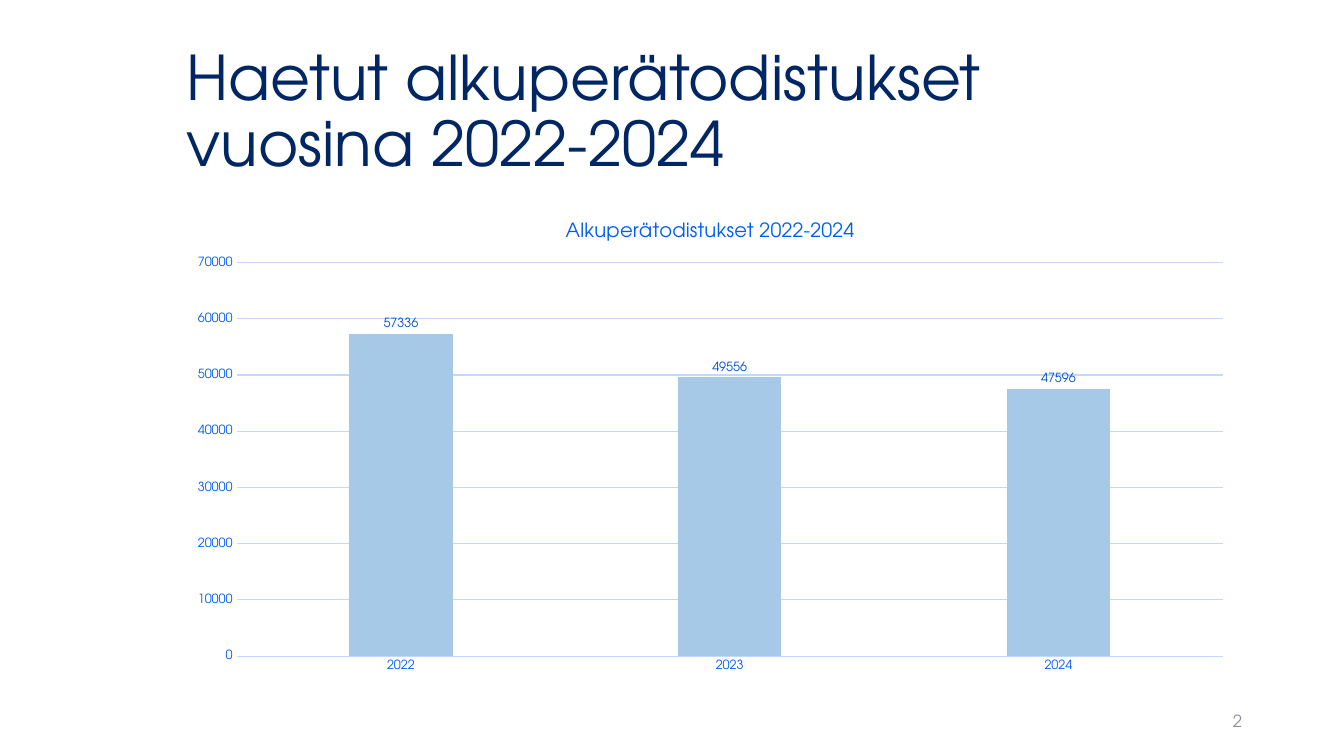
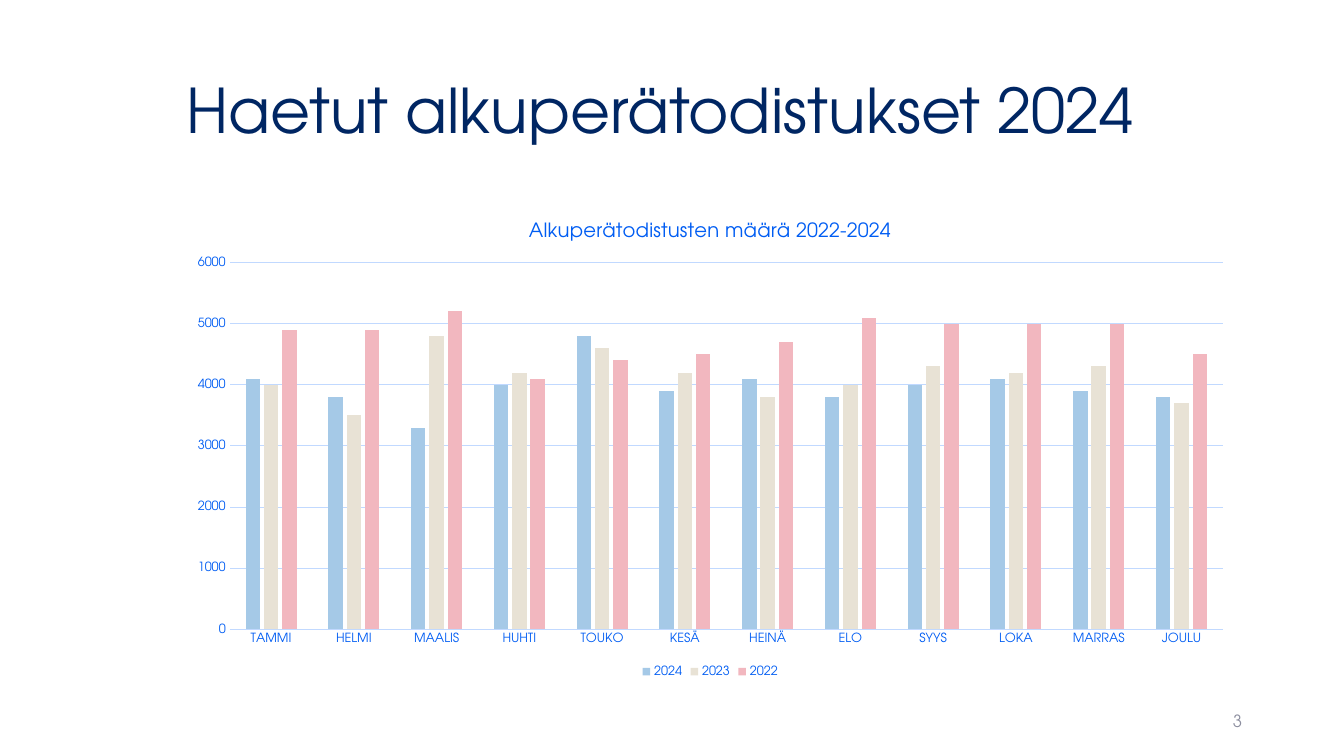
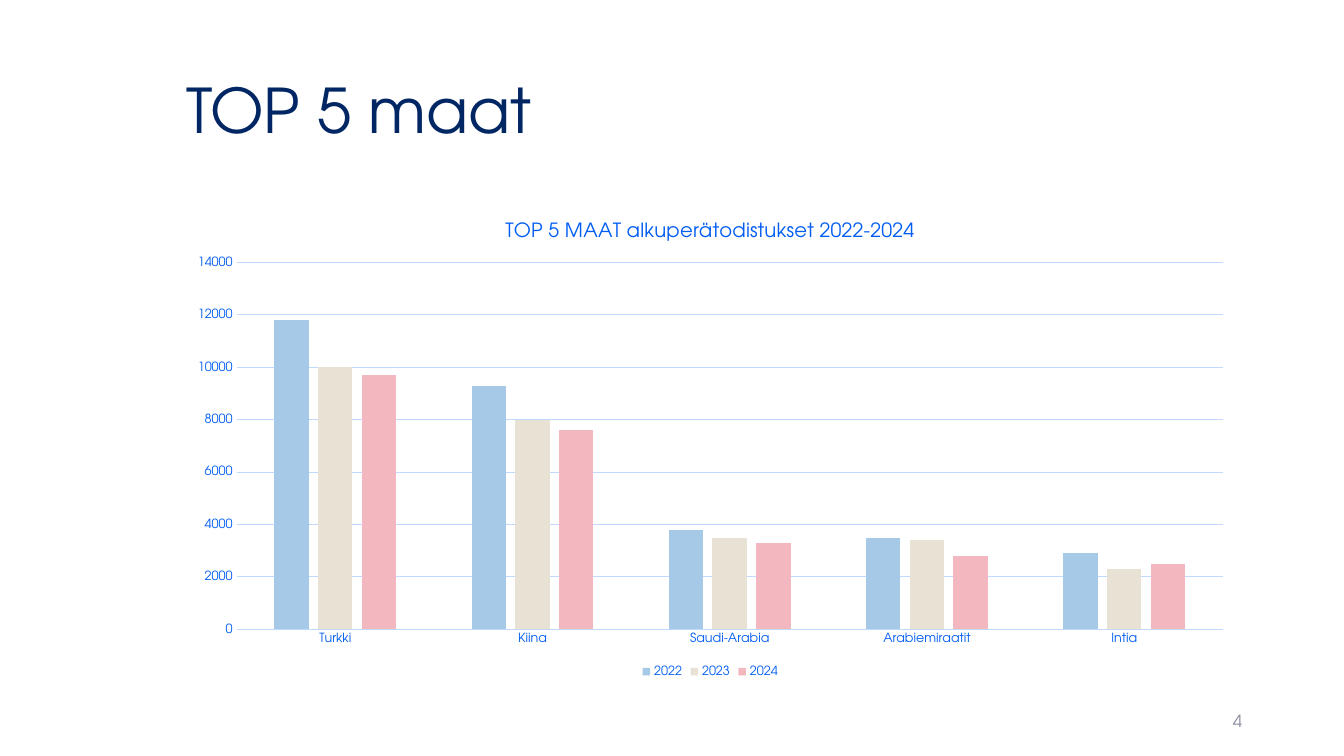
from pptx import Presentation
from pptx import util as u
from pptx.chart.data import CategoryChartData
from pptx.dml.color import RGBColor
from pptx.enum import chart as ch, text

# Shared style
FACE = "TeX Gyre Adventor"
NAVY, BLUE, DEEP = "002663", "005DF3", "004DCA"
PALE, GRAY = "C1D9FF", "8C8E9F"
BARS = ["A5C9E7", "E8E2D5", "F2B7BF"]
LEFT, WIDE = 1.75, 10.59


def paint(code):
    return RGBColor.from_string(code)


def assign(item, form):
    for key, val in form.items():
        setattr(item, key, val)


def style(font, size, code):
    assign(font, {"name": FACE, "size": u.Pt(size), "bold": False})
    font.color.rgb = paint(code)


def rule(line):
    line.width = u.Pt(0.75)
    line.color.rgb = paint(PALE)


class Deck:
    def __init__(self):
        self.show = Presentation()
        assign(self.show, {"slide_width": u.Inches(13.33),
                           "slide_height": u.Inches(7.5)})
        self.slide = None

    def page(self, title, number):
        self.slide = self.show.slides.add_slide(self.show.slide_layouts[5])
        self.title(title)
        self.number(number)

    def place(self, item, left, top, width, height):
        assign(item, {"left": u.Inches(left), "top": u.Inches(top),
                      "width": u.Inches(width), "height": u.Inches(height)})

    def label(self, shape, words, size, code, align):
        frame = shape.text_frame
        assign(frame, {"word_wrap": True,
                       "auto_size": text.MSO_AUTO_SIZE.NONE,
                       "vertical_anchor": text.MSO_ANCHOR.MIDDLE})
        para = frame.paragraphs[0]
        para.text = words
        para.alignment = align
        style(para.font, size, code)
        return para

    def title(self, words):
        shape = self.slide.shapes.title
        self.place(shape, LEFT, 0.4, WIDE, 1.45)
        para = self.label(shape, words, 44, NAVY, text.PP_ALIGN.LEFT)
        para.line_spacing = 0.9

    def number(self, value):
        box = self.slide.shapes.add_textbox(
            u.Inches(9.42), u.Inches(6.95), u.Inches(3), u.Inches(0.4))
        self.label(box, str(value), 12, GRAY, text.PP_ALIGN.RIGHT)

    def columns(self, title, cats, rows, top, step):
        data = CategoryChartData(number_format="0")
        data.categories = cats
        for name, vals in rows.items():
            data.add_series(name, vals)
        chart = self.slide.shapes.add_chart(
            ch.XL_CHART_TYPE.COLUMN_CLUSTERED, u.Inches(LEFT), u.Inches(2),
            u.Inches(WIDE), u.Inches(4.76), data).chart
        style(chart.font, 10, NAVY)

        # Heading
        chart.has_title = True
        para = chart.chart_title.text_frame.paragraphs[0]
        para.text = title
        style(para.runs[0].font, 14, BLUE)
        chart.chart_title.include_in_layout = False

        # Axes
        for axis in (chart.category_axis, chart.value_axis):
            assign(axis, {"major_tick_mark": ch.XL_TICK_MARK.NONE,
                          "minor_tick_mark": ch.XL_TICK_MARK.NONE})
            style(axis.tick_labels.font, 9, BLUE)
        rule(chart.category_axis.format.line)
        scale = chart.value_axis
        assign(scale, {"minimum_scale": 0, "maximum_scale": top,
                       "major_unit": step, "has_major_gridlines": True})
        scale.format.line.fill.background()
        rule(scale.major_gridlines.format.line)

        # Bars
        plot = chart.plots[0]
        assign(plot, {"gap_width": 219, "overlap": -27,
                      "vary_by_categories": False})
        for bars, code in zip(plot.series, BARS):
            bars.format.fill.solid()
            bars.format.fill.fore_color.rgb = paint(code)

        # Legend for several series, value labels for one
        chart.has_legend = len(rows) > 1
        if chart.has_legend:
            assign(chart.legend, {"position": ch.XL_LEGEND_POSITION.BOTTOM,
                                  "include_in_layout": False})
            style(chart.legend.font, 9, BLUE)
        else:
            tags = plot.series[0].data_labels
            assign(tags, {"show_value": True,
                          "position": ch.XL_LABEL_POSITION.OUTSIDE_END})
            style(tags.font, 9, DEEP)


def main():
    deck = Deck()

    # Yearly totals
    deck.page("Haetut alkuperätodistukset\vvuosina 2022-2024", 2)
    deck.columns("Alkuperätodistukset 2022-2024", ["2022", "2023", "2024"],
                 {"Series 1": [57336, 49556, 47596]}, 70000, 10000)

    # Monthly counts
    deck.page("Haetut alkuperätodistukset 2024", 3)
    months = ["TAMMI", "HELMI", "MAALIS", "HUHTI", "TOUKO", "KESÄ",
              "HEINÄ", "ELO", "SYYS", "LOKA", "MARRAS", "JOULU"]
    deck.columns("Alkuperätodistusten määrä 2022-2024", months, {
        "2024": [4100, 3800, 3300, 4000, 4800, 3900,
                 4100, 3800, 4000, 4100, 3900, 3800],
        "2023": [4000, 3500, 4800, 4200, 4600, 4200,
                 3800, 4000, 4300, 4200, 4300, 3700],
        "2022": [4900, 4900, 5200, 4100, 4400, 4500,
                 4700, 5100, 5000, 5000, 5000, 4500],
    }, 6000, 1000)

    # Leading countries
    deck.page("TOP 5 maat", 4)
    lands = ["Turkki", "Kiina", "Saudi-Arabia", "Arabiemiraatit", "Intia"]
    deck.columns("TOP 5 MAAT alkuperätodistukset 2022-2024", lands, {
        "2022": [11800, 9300, 3800, 3500, 2900],
        "2023": [10000, 8000, 3500, 3400, 2300],
        "2024": [9700, 7600, 3300, 2800, 2500],
    }, 14000, 2000)

    deck.show.save("out.pptx")


if __name__ == "__main__":
    main()
